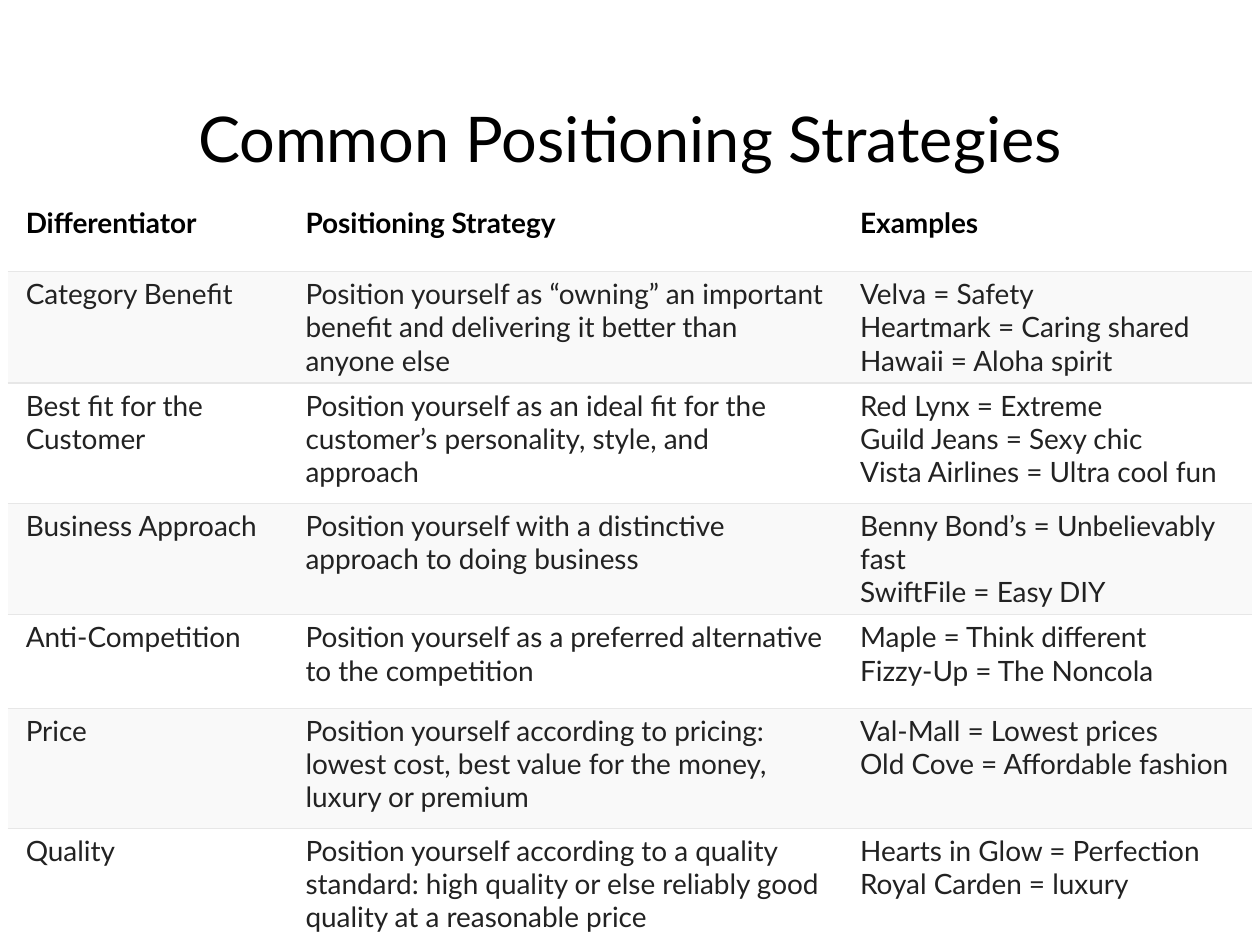
from lxml import etree
from pptx import Presentation
from pptx import util as u
from pptx.dml.color import RGBColor
from pptx.enum import text
from pptx.oxml import ns

BLACK = RGBColor(0x00, 0x00, 0x00)
INK = RGBColor(0x22, 0x22, 0x22)
WHITE = RGBColor(0xFF, 0xFF, 0xFF)
BAND = RGBColor(0xF9, 0xF9, 0xF9)
RULE = RGBColor(0xE7, 0xE7, 0xE7)
PLAIN_TABLE = "{2D5ABB26-0587-4C30-8999-92F81FD0307C}"

HEADINGS = ("Differentiator", "Positioning Strategy", "Examples")
STRATEGIES = (
    ("Category Benefit",
     "Position yourself as “owning” an important benefit and delivering it better than anyone else",
     "Velva = Safety\nHeartmark = Caring shared\nHawaii = Aloha spirit"),
    ("Best fit for the Customer",
     "Position yourself as an ideal fit for the customer’s personality, style, and approach",
     "Red Lynx = Extreme\nGuild Jeans = Sexy chic\nVista Airlines = Ultra cool fun"),
    ("Business Approach",
     "Position yourself with a distinctive approach to doing business",
     "Benny Bond’s = Unbelievably fast\nSwiftFile = Easy DIY"),
    ("Anti-Competition",
     "Position yourself as a preferred alternative to the competition",
     "Maple = Think different\nFizzy-Up = The Noncola"),
    ("Price",
     "Position yourself according to pricing: lowest cost, best value for the money, luxury or premium",
     "Val-Mall = Lowest prices\nOld Cove = Affordable fashion"),
    ("Quality",
     "Position yourself according to a quality standard: high quality or else reliably good "
     "quality at a reasonable price",
     "Hearts in Glow = Perfection\nRoyal Carden = luxury"),
)
COLUMN_WIDTHS = (5.64, 11.18, 8.26)
ROW_HEIGHTS = (1.44, 2.24, 2.42, 2.24, 1.88, 2.42, 2.42)


class SlideBuilder:
    """Holds the text style and the current slide, and adds elements to it."""

    def __init__(self, page, font="Lato"):
        self.page = page
        self.font = font

    def add_lines(self, frame, content, size, color, bold=False):
        for index, line in enumerate(content.split("\n")):
            para = frame.add_paragraph() if index else frame.paragraphs[0]
            span = para.add_run()
            span.text = line
            span.font.name = self.font
            span.font.size = u.Pt(size)
            span.font.bold = bold
            span.font.color.rgb = color

    def title(self, content, left, top, width, height):
        box = self.page.shapes.add_textbox(u.Cm(left), u.Cm(top), u.Cm(width), u.Cm(height))
        frame = box.text_frame
        frame.word_wrap = True
        frame.vertical_anchor = text.MSO_ANCHOR.MIDDLE
        self.add_lines(frame, content, 36, BLACK)
        frame.paragraphs[0].alignment = text.PP_ALIGN.CENTER
        frame.paragraphs[0].line_spacing = 0.9

    def border(self, cell, side):
        line = etree.Element(ns.qn(f"a:ln{side}"), w=str(u.Pt(0.75)))
        fill = etree.SubElement(line, ns.qn("a:solidFill"))
        etree.SubElement(fill, ns.qn("a:srgbClr"), val=str(RULE))
        cell._tc.get_or_add_tcPr().insert(0, line)

    def table(self, rows, widths, heights, left, top):
        frame = self.page.shapes.add_table(
            len(rows), len(widths), u.Cm(left), u.Cm(top),
            u.Cm(sum(widths)), u.Cm(sum(heights)))
        grid = frame.table
        grid.first_row = grid.horz_banding = False
        grid._tbl.tblPr.find(ns.qn("a:tableStyleId")).text = PLAIN_TABLE
        for column, width in zip(grid.columns, widths):
            column.width = u.Cm(width)
        for number, (row, height, contents) in enumerate(zip(grid.rows, heights, rows)):
            row.height = u.Cm(height)
            header = number == 0
            for cell, content in zip(row.cells, contents):
                cell.margin_left = cell.margin_right = u.Cm(0.36)
                cell.margin_top = cell.margin_bottom = u.Cm(0.13 if header else 0.11)
                cell.fill.solid()
                cell.fill.fore_color.rgb = BAND if number % 2 else WHITE
                if number < len(rows) - 1:
                    self.border(cell, "B")
                if not header:
                    self.border(cell, "T")
                self.add_lines(cell.text_frame, content, 16, BLACK if header else INK, header)


def main():
    deck = Presentation()
    deck.slide_width = u.Cm(25.4)
    deck.slide_height = u.Cm(19.05)
    builder = SlideBuilder(deck.slides.add_slide(deck.slide_layouts[6]))
    builder.title("Common Positioning Strategies", 1.75, 1.02, 21.9, 3.68)
    builder.table((HEADINGS, *STRATEGIES), COLUMN_WIDTHS, ROW_HEIGHTS, 0.16, 4.03)
    deck.save("out.pptx")


if __name__ == "__main__":
    main()
